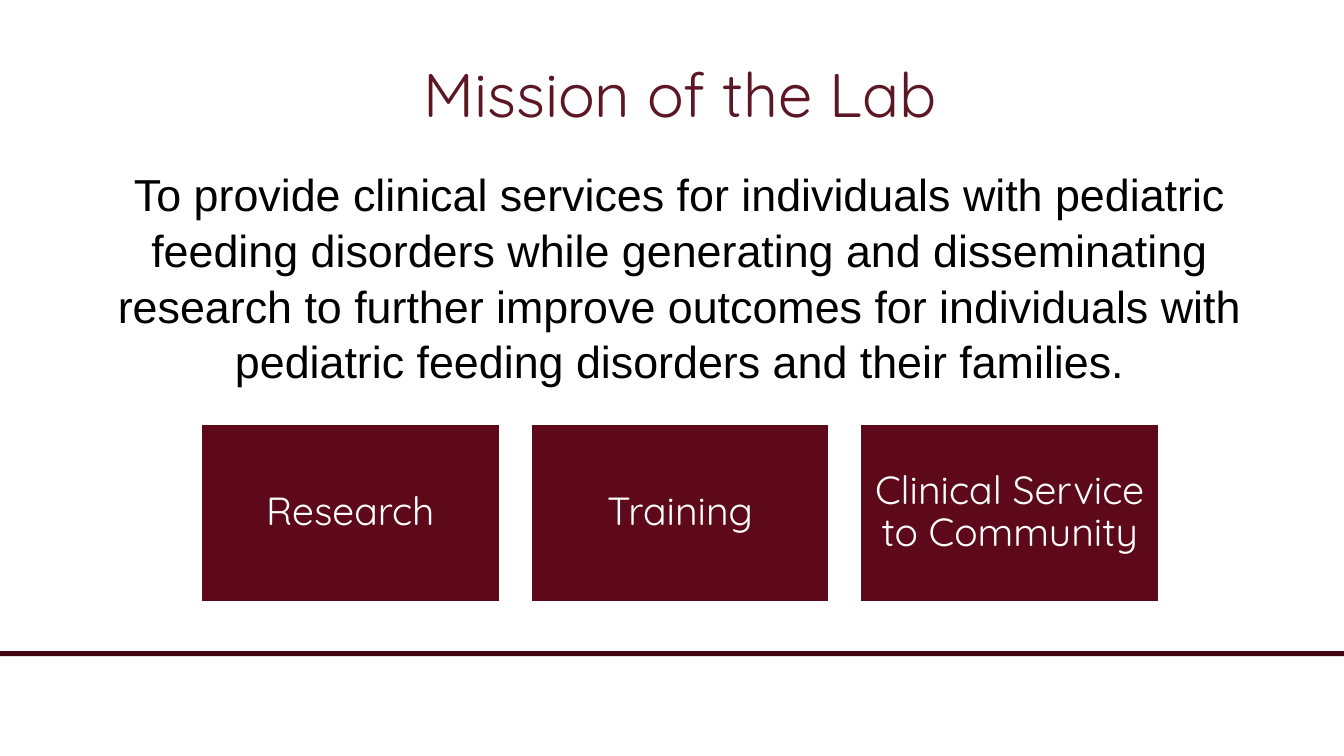
from pptx import Presentation
from pptx.dml.color import RGBColor
from pptx.enum import shapes, text
from pptx.util import Inches, Pt

COLORS = {
    "paper": "FFFFFF",
    "ink": "000000",
    "title": "5D1724",
    "card": "5E091A",
    "rule": "410611",
}


class MissionSlide:
    def __init__(self, deck):
        self.page = deck.slides.add_slide(deck.slide_layouts[6])
        self.heading_font = "Quicksand"
        self.body_font = "Arial"

    def color(self, name):
        return RGBColor.from_string(COLORS[name])

    def set_words(self, box, words, size, font, color, anchor, spacing=1.0):
        frame = box.text_frame
        frame.word_wrap = True
        frame.vertical_anchor = anchor
        para = frame.paragraphs[0]
        para.text = words
        para.alignment = text.PP_ALIGN.CENTER
        para.line_spacing = spacing
        para.font.size = Pt(size)
        para.font.name = font
        para.font.color.rgb = self.color(color)
        return frame

    def rectangle(self, left, top, width, height, fill):
        box = self.page.shapes.add_shape(
            shapes.MSO_SHAPE.RECTANGLE,
            Inches(left), Inches(top), Inches(width), Inches(height))
        box.shadow.inherit = False
        box.fill.solid()
        box.fill.fore_color.rgb = self.color(fill)
        box.line.fill.background()
        return box

    def textbox(self, left, top, width, height, *style):
        box = self.page.shapes.add_textbox(
            Inches(left), Inches(top), Inches(width), Inches(height))
        return self.set_words(box, *style)

    def card(self, left, top, width, height, words):
        box = self.rectangle(left, top, width, height, "card")
        box.line.color.rgb = self.color("paper")
        box.line.width = Pt(2)
        frame = self.set_words(box, words, 28, self.heading_font, "paper",
                               text.MSO_ANCHOR.MIDDLE, 0.9)
        frame.margin_left = frame.margin_right = Inches(0.12)
        frame.margin_top = frame.margin_bottom = Inches(0.12)


def main():
    deck = Presentation()
    deck.slide_width, deck.slide_height = Inches(13.33), Inches(7.5)
    slide = MissionSlide(deck)

    # Footer rule
    slide.rectangle(0, 6.46, 13.33, 0.05, "rule")

    # Title and mission statement
    slide.textbox(0.82, 0.3, 11.85, 1.25, "Mission of the Lab", 44,
                  slide.heading_font, "title", text.MSO_ANCHOR.MIDDLE)
    mission = slide.textbox(
        0.82, 1.55, 11.85, 4.32,
        "To provide clinical services for individuals with pediatric feeding "
        "disorders while generating and disseminating research to further "
        "improve outcomes for individuals with pediatric feeding disorders "
        "and their families.",
        32, slide.body_font, "ink", text.MSO_ANCHOR.TOP, 1.04)
    mission.margin_top = Inches(0.08)

    # Three areas of work
    areas = ["Research", "Training", "Clinical Service to Community"]
    for index, area in enumerate(areas):
        slide.card(1.99 + 3.27 * index, 4.2, 2.97, 1.78, area)

    deck.save("out.pptx")


if __name__ == "__main__":
    main()
